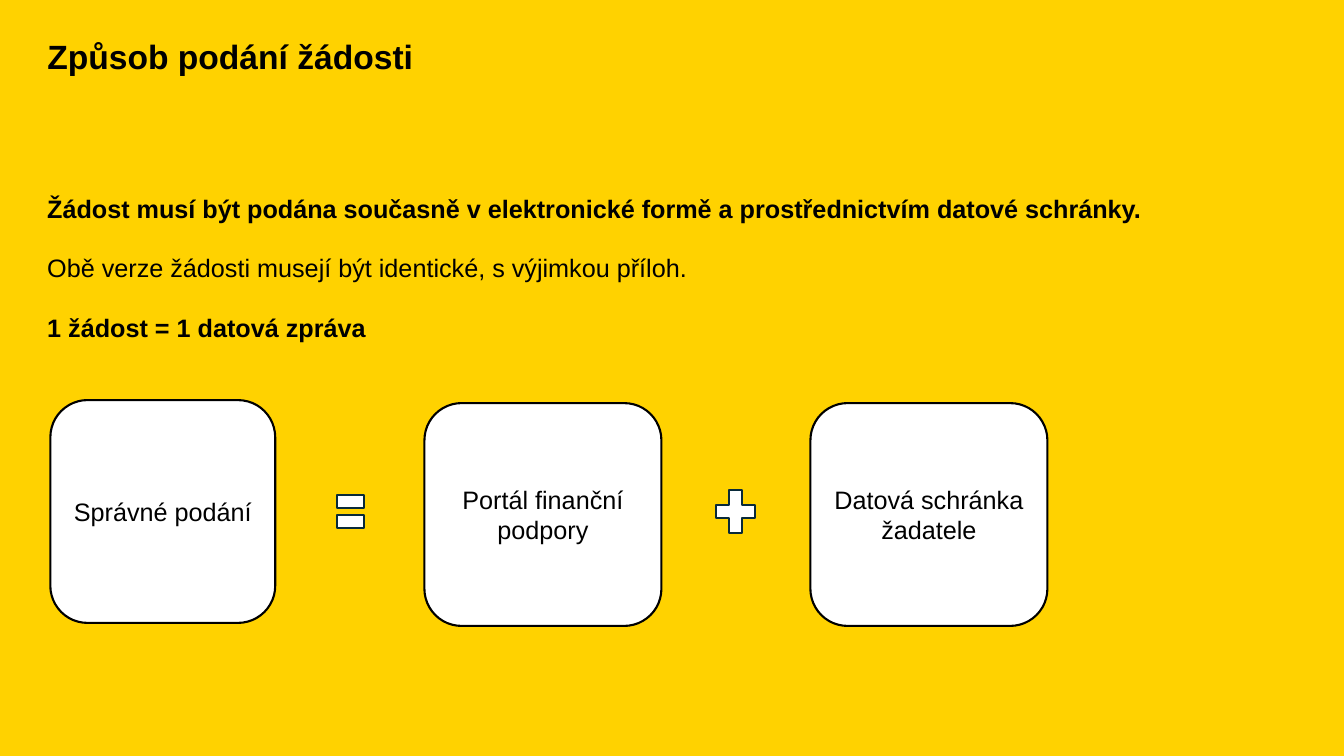
"""Build the slide on how an application is submitted."""
from dataclasses import dataclass

from pptx import Presentation
from pptx.dml.color import RGBColor
from pptx.enum.shapes import MSO_SHAPE
from pptx.enum.text import MSO_ANCHOR, MSO_AUTO_SIZE, PP_ALIGN
from pptx.util import Inches, Pt

ROUND = MSO_SHAPE.ROUNDED_RECTANGLE
EQUAL = MSO_SHAPE.MATH_EQUAL
PLUS = MSO_SHAPE.MATH_PLUS
TOP, MIDDLE = MSO_ANCHOR.TOP, MSO_ANCHOR.MIDDLE
LEFT, CENTER = PP_ALIGN.LEFT, PP_ALIGN.CENTER
FIXED = MSO_AUTO_SIZE.NONE

COLORS = {"back": "FFD200", "ink": "000000", "fill": "FFFFFF", "sign": "092A39"}
WIDTH, HEIGHT = Inches(13.333), Inches(7.5)
COL, ROW = WIDTH / 100, HEIGHT / 100
EDGE = 2.78
TALL = 29.47
SIGN_TOP, SIGN_TALL = 63.87, 7.6


@dataclass
class Area:
    """Place on a grid of 100 columns and 100 rows."""
    left: float
    top: float
    wide: float
    tall: float

    def box(self) -> tuple[int, int, int, int]:
        """Return left, top, width and height in EMU."""
        return (round(self.left * COL), round(self.top * ROW),
                round(self.wide * COL), round(self.tall * ROW))


@dataclass
class Line:
    """One paragraph of text."""
    text: str
    bold: bool = False


@dataclass
class Part:
    """One shape of the equation."""
    kind: int
    area: Area
    edge: str
    text: str = ""


TITLE = Line("Způsob podání žádosti", True)
BODY = [
    Line("Žádost musí být podána současně v elektronické formě "
         "a prostřednictvím datové schránky.", True),
    Line("Obě verze žádosti musejí být identické, s výjimkou příloh."),
    Line("1 žádost = 1 datová zpráva", True),
]
PARTS = [
    Part(ROUND, Area(3.75, 52.93, 16.73, TALL), "ink", "Správné podání"),
    Part(ROUND, Area(31.58, 53.33, 17.63, TALL), "ink", "Portál finanční podpory"),
    Part(ROUND, Area(60.3, 53.33, 17.63, TALL), "ink", "Datová schránka žadatele"),
    Part(EQUAL, Area(24.68, SIGN_TOP, 2.78, SIGN_TALL), "sign"),
    Part(PLUS, Area(52.73, SIGN_TOP, 3.98, SIGN_TALL), "sign"),
]


def color(name: str) -> RGBColor:
    """Look up a colour by name."""
    return RGBColor.from_string(COLORS[name])


def assign(target, values: dict) -> None:
    """Set each named attribute on the target."""
    for name, value in values.items():
        setattr(target, name, value)


def write(frame, lines: list[Line], size: int, anchor, form: dict) -> None:
    """Fill a text frame with formatted paragraphs."""
    assign(frame, {"word_wrap": True, "auto_size": FIXED, "vertical_anchor": anchor})
    for index, line in enumerate(lines):
        para = frame.add_paragraph() if index else frame.paragraphs[0]
        assign(para, form)
        if index:
            para.space_before = Pt(10)
        run = para.add_run()
        run.text = line.text
        assign(run.font, {"name": "Arial", "size": Pt(size), "bold": line.bold})
        run.font.color.rgb = color("ink")


def draw(shapes, part: Part) -> None:
    """Add one shape of the equation."""
    shape = shapes.add_shape(part.kind, *part.area.box())
    shape.shadow.inherit = False
    shape.fill.solid()
    shape.fill.fore_color.rgb = color("fill")
    shape.line.color.rgb = color(part.edge)
    shape.line.width = Pt(1.5)
    if part.text:
        write(shape.text_frame, [Line(part.text)], 18, MIDDLE, {"alignment": CENTER})


def main() -> None:
    """Build and save the deck."""
    deck = Presentation()
    assign(deck, {"slide_width": WIDTH, "slide_height": HEIGHT})
    slide = deck.slides.add_slide(deck.slide_layouts[5])
    slide.background.fill.solid()
    slide.background.fill.fore_color.rgb = color("back")
    title = slide.shapes.title
    place = Area(EDGE, 4.8, 92.5, 6).box()
    assign(title, dict(zip(("left", "top", "width", "height"), place)))
    write(title.text_frame, [TITLE], 24, MIDDLE, {"alignment": LEFT, "line_spacing": 0.9})
    body = slide.shapes.add_textbox(*Area(EDGE, 22.93, 91, 27.07).box())
    write(body.text_frame, BODY, 18, TOP, {"alignment": LEFT, "line_spacing": 1.5})
    for part in PARTS:
        draw(slide.shapes, part)
    deck.save("out.pptx")


if __name__ == "__main__":
    main()
